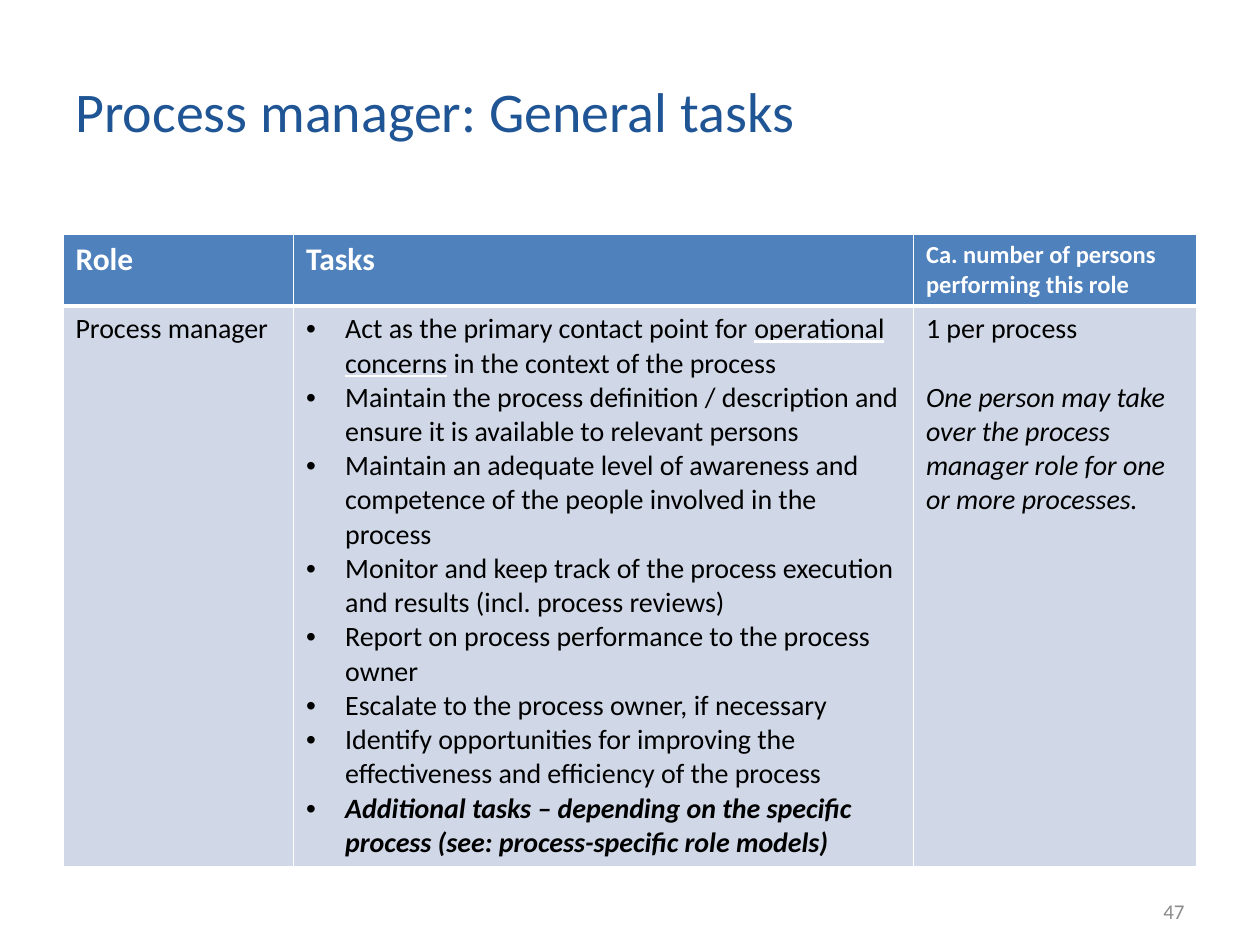
from pptx import Presentation
from pptx.dml.color import RGBColor
from pptx.enum.text import MSO_ANCHOR, PP_ALIGN
from pptx.oxml import parse_xml
from pptx.oxml.ns import nsdecls, qn
from pptx.util import Inches, Pt

FONT = "Calibri"
TITLE_BLUE = RGBColor(0x20, 0x55, 0x95)
HEAD_BLUE = RGBColor(0x4F, 0x81, 0xBD)
BODY_BLUE = RGBColor(0xD0, 0xD8, 0xE7)
WHITE = RGBColor(0xFF, 0xFF, 0xFF)
BLACK = RGBColor(0, 0, 0)
GREY = RGBColor(0x8B, 0x8B, 0x8B)

COL_WIDTHS = [1.83, 4.92, 2.25]
ROW_HEIGHTS = [0.56, 4.45]
HEADERS = [("Role", 18), ("Tasks", 18),
           ("Ca. number of persons performing this role", 14)]
# Each task is a list of runs: text and its format values
TASKS = [
    [("Act as the primary contact point for ", {}),
     ("operational concerns", {"underline": True}),
     (" in the context of the process", {})],
    [("Maintain the process definition / description and ensure it is "
      "available to relevant persons", {})],
    [("Maintain an adequate level of awareness and competence of the people "
      "involved in the process", {})],
    [("Monitor and keep track of the process execution and results "
      "(incl. process reviews)", {})],
    [("Report on process performance to the process owner", {})],
    [("Escalate to the process owner, if necessary", {})],
    [("Identify opportunities for improving the effectiveness and efficiency "
      "of the process", {})],
    [("Additional tasks – depending on the specific process "
      "(see: process-specific role models)", {"bold": True, "italic": True})],
]
PERSONS = [
    [("1 per process", {})],
    [("One person may take over the process manager role for one or more "
      "processes.", {"italic": True})],
]


def add_run(p, text, size, color, **fmt):
    r = p.add_run()
    r.text = text
    values = {"name": FONT, "size": Pt(size), "bold": False, **fmt}
    for name, value in values.items():
        setattr(r.font, name, value)
    r.font.color.rgb = color
    if fmt.get("underline"):
        fill = r.font._element.find(qn("a:solidFill"))
        fill.addnext(parse_xml(
            f'<a:uFill {nsdecls("a")}><a:solidFill><a:srgbClr val="{WHITE}"/>'
            '</a:solidFill></a:uFill>'))


def add_text(s, box, text, size, color, align=PP_ALIGN.LEFT):
    tf = s.shapes.add_textbox(*map(Inches, box)).text_frame
    tf.word_wrap = True
    tf.vertical_anchor = MSO_ANCHOR.MIDDLE
    p = tf.paragraphs[0]
    p.alignment = align
    add_run(p, text, size, color)


def add_bullet(p):
    pPr = p._p.get_or_add_pPr()
    indent = Inches(0.31)
    pPr.set("marL", str(indent))
    pPr.set("indent", str(-indent))
    for xml in (f'<a:buClr {nsdecls("a")}><a:srgbClr val="{BLACK}"/></a:buClr>',
                f'<a:buFont {nsdecls("a")} typeface="Arial"/>',
                f'<a:buChar {nsdecls("a")} char="•"/>'):
        pPr.append(parse_xml(xml))


def style_cell(cell, fill, **widths):
    tcPr = cell._tc.get_or_add_tcPr()
    for side in "LRTB":
        width = Pt(widths.get(side, 0.96))
        tcPr.append(parse_xml(
            f'<a:ln{side} {nsdecls("a")} w="{width}"><a:solidFill>'
            f'<a:srgbClr val="{WHITE}"/></a:solidFill></a:ln{side}>'))
    cell.fill.solid()
    cell.fill.fore_color.rgb = fill


def fill_cell(cell, paragraphs, bullets=False, gap=0):
    tf = cell.text_frame
    for i, runs in enumerate(paragraphs):
        p = tf.add_paragraph() if i else tf.paragraphs[0]
        if i and gap:
            p.space_before = Pt(gap)
        if bullets:
            add_bullet(p)
        for text, fmt in runs:
            add_run(p, text, 16, BLACK, **fmt)


def add_role_table(s):
    table = s.shapes.add_table(
        2, 3, Inches(0.5), Inches(1.86),
        Inches(sum(COL_WIDTHS)), Inches(sum(ROW_HEIGHTS))).table
    for col, width in zip(table.columns, COL_WIDTHS):
        col.width = Inches(width)
    for row, height in zip(table.rows, ROW_HEIGHTS):
        row.height = Inches(height)

    # Header row
    for i, (text, size) in enumerate(HEADERS):
        cell = table.cell(0, i)
        style_cell(cell, HEAD_BLUE, B=3)
        add_run(cell.text_frame.paragraphs[0], text, size, WHITE, bold=True)

    # Body row
    for i in range(3):
        style_cell(table.cell(1, i), BODY_BLUE, T=3)
    fill_cell(table.cell(1, 0), [[("Process manager", {})]])
    fill_cell(table.cell(1, 1), TASKS, bullets=True)
    fill_cell(table.cell(1, 2), PERSONS, gap=19.5)


def main():
    prs = Presentation()
    prs.slide_width, prs.slide_height = Inches(10), Inches(7.5)
    s = prs.slides.add_slide(prs.slide_layouts[6])
    # Title, table and page number
    add_text(s, (0.5, 0.3, 8.04, 1.15), "Process manager: General tasks",
             32, TITLE_BLUE)
    add_role_table(s)
    add_text(s, (7.17, 7.03, 2.33, 0.4), "47", 12, GREY, PP_ALIGN.RIGHT)
    prs.save("out.pptx")


if __name__ == "__main__":
    main()
